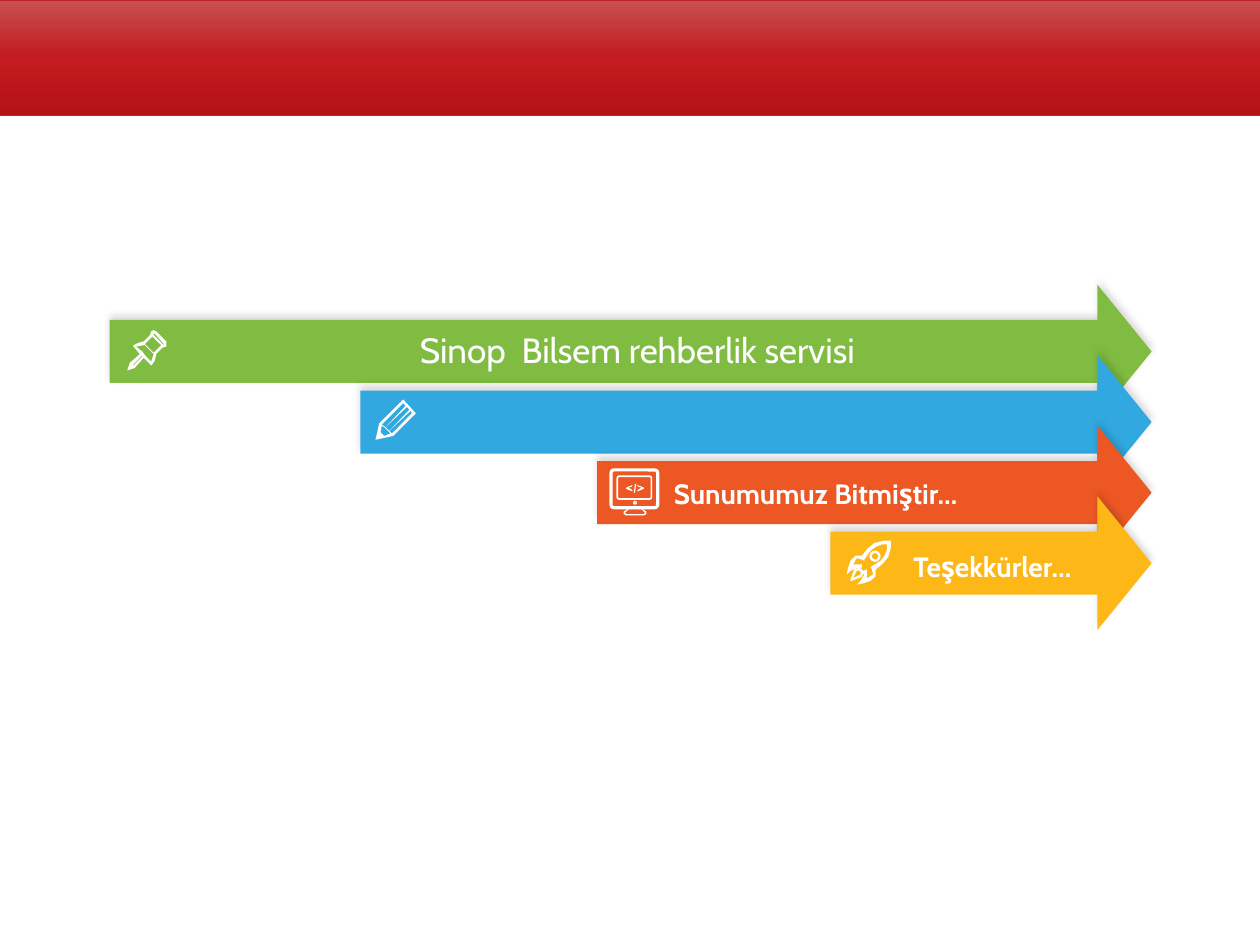
from copy import deepcopy

from pptx import Presentation
from pptx.dml.color import RGBColor
from pptx.enum.shapes import MSO_SHAPE as Preset
from pptx.enum.text import PP_ALIGN as Align
from pptx.oxml import parse_xml
from pptx.oxml.ns import nsdecls
from pptx.util import Inches, Pt

COLORS = {
    "green": "7FBC41", "blue": "31A8DF", "orange": "EC5724", "yellow": "FDB817",
    "white": "FFFFFF", "shadow": "000000", "header_line": "BB2326",
    "header_top": "C65051", "header_middle": "C31B1F", "header_bottom": "B41215",
}
FONT = "Cabin"

ARROWS = [("green", 0.87), ("blue", 2.86), ("orange", 4.74), ("yellow", 6.59)]
FIRST_CENTER, ARROW_STEP = 2.79, 0.56
HEAD_LEFT, TIP = 8.71, 9.14
HEAD_HALF, SHAFT_HALF = 0.53, 0.25

PENCIL = [
    [(3.3, 3.28), (3.2, 3.17), (3.01, 3.36), (2.98, 3.49), (3.12, 3.46)],
    [(3.11, 3.44), (3.09, 3.42), (3.26, 3.26), (3.27, 3.28)],
    [(3.05, 3.46), (3.02, 3.43), (3.03, 3.38), (3.05, 3.39), (3.09, 3.43), (3.1, 3.44)],
    [(3.25, 3.25), (3.09, 3.42), (3.06, 3.39), (3.23, 3.23)],
    [(3.2, 3.2), (3.22, 3.22), (3.06, 3.39), (3.03, 3.37)],
]
PIN = [
    [(1.24, 2.81), (1.29, 2.76), (1.32, 2.75), (1.32, 2.71), (1.24, 2.63), (1.22, 2.62),
     (1.2, 2.63), (1.19, 2.66), (1.14, 2.71), (1.1, 2.72), (1.06, 2.74), (1.06, 2.75),
     (1.11, 2.81), (1.03, 2.88), (1.01, 2.94), (1.07, 2.92), (1.14, 2.84), (1.2, 2.9),
     (1.21, 2.89), (1.23, 2.86)],
    [(1.23, 2.65), (1.3, 2.73), (1.3, 2.74), (1.29, 2.73), (1.22, 2.66), (1.22, 2.65)],
    [(1.22, 2.8), (1.15, 2.73), (1.21, 2.67), (1.28, 2.74)],
    [(1.06, 2.9), (1.05, 2.9), (1.13, 2.82), (1.13, 2.83)],
    [(1.16, 2.83), (1.13, 2.79), (1.08, 2.75), (1.14, 2.74), (1.15, 2.74), (1.22, 2.81),
     (1.2, 2.87)],
]
ROCKET = [
    [(6.72, 4.56), (6.73, 4.51), (6.75, 4.45), (6.79, 4.41), (6.84, 4.41), (6.89, 4.35),
     (6.94, 4.31), (7.02, 4.29), (7.07, 4.29), (7.07, 4.35), (7.05, 4.42), (7.01, 4.47),
     (6.95, 4.52), (6.95, 4.57), (6.91, 4.61), (6.85, 4.63), (6.8, 4.64), (6.83, 4.61),
     (6.86, 4.56), (6.84, 4.55), (6.81, 4.52), (6.8, 4.51), (6.75, 4.53)],
    [(6.95, 4.34), (6.91, 4.37), (6.86, 4.44), (6.86, 4.45), (6.84, 4.44), (6.8, 4.43),
     (6.77, 4.48), (6.84, 4.48), (6.84, 4.5), (6.83, 4.51), (6.85, 4.53), (6.88, 4.52),
     (6.88, 4.59), (6.93, 4.56), (6.92, 4.52), (6.91, 4.5), (6.99, 4.45), (7.02, 4.41),
     (7.04, 4.36), (7.04, 4.32), (7, 4.32)],
]
ROCKET_FLAME = [
    [(6.75, 4.61), (6.75, 4.6), (6.78, 4.52), (6.81, 4.51), (6.84, 4.52), (6.85, 4.55),
     (6.84, 4.58), (6.76, 4.61)],
    [(6.83, 4.53), (6.8, 4.53), (6.77, 4.59), (6.83, 4.56)],
]
MONITOR_STAND = [
    [(4.98, 4.04), (4.95, 4.06), (4.95, 4.08), (4.97, 4.09), (5.11, 4.09), (5.13, 4.08),
     (5.13, 4.06), (5.1, 4.04)],
    [(4.99, 4.04), (4.96, 4.07), (4.97, 4.08), (5.11, 4.08), (5.12, 4.07), (5.09, 4.04)],
]
CODE_MARKS = [
    [(4.97, 3.88), (5.02, 3.9), (5.02, 3.89), (4.99, 3.87), (5.02, 3.86), (5.02, 3.85),
     (4.97, 3.87)],
    [(5.04, 3.84), (5.03, 3.91), (5.04, 3.91), (5.05, 3.84)],
    [(5.06, 3.86), (5.09, 3.87), (5.06, 3.89), (5.06, 3.9), (5.11, 3.88), (5.11, 3.87),
     (5.06, 3.85)],
]


class SlideBuilder:
    def __init__(self, slide, font, colors):
        self.slide = slide
        self.font = font
        self.colors = colors

    def color(self, name):
        return RGBColor.from_string(self.colors[name])

    def polygon(self, contours, color):
        outlines = [[(Inches(x), Inches(y)) for x, y in contour] for contour in contours]
        builder = self.slide.shapes.build_freeform(*outlines[0][0])
        builder.add_line_segments(outlines[0][1:])
        for outline in outlines[1:]:
            builder.move_to(*outline[0])
            builder.add_line_segments(outline[1:])
        shape = builder.convert_to_shape()
        shape.shadow.inherit = False
        shape.fill.solid()
        shape.fill.fore_color.rgb = self.color(color)
        shape.line.fill.background()
        return shape

    def arrow(self, left, center, color):
        shape = self.polygon([[
            (HEAD_LEFT, center - HEAD_HALF), (TIP, center), (HEAD_LEFT, center + HEAD_HALF),
            (HEAD_LEFT, center + SHAFT_HALF), (left, center + SHAFT_HALF),
            (left, center - SHAFT_HALF), (HEAD_LEFT, center - SHAFT_HALF),
        ]], color)
        effects = shape._element.xpath("./p:spPr/a:effectLst")[0]
        effects.append(parse_xml(
            f'<a:outerShdw {nsdecls("a")} blurRad="{Pt(4)}" dist="{Pt(3)}" dir="16200000" '
            f'algn="b" rotWithShape="0"><a:srgbClr val="{self.colors["shadow"]}">'
            '<a:alpha val="15000"/></a:srgbClr></a:outerShdw>'))

    def preset(self, kind, left, top, width, height, line, weight):
        shape = self.slide.shapes.add_shape(
            kind, Inches(left), Inches(top), Inches(width), Inches(height))
        shape.shadow.inherit = False
        shape.fill.background()
        shape.line.color.rgb = self.color(line)
        shape.line.width = Pt(weight)
        return shape

    def header(self, stops):
        shape = self.preset(Preset.RECTANGLE, -0.01, 0, 10.01, 0.92, "header_line", 0.5)
        shape.fill.gradient()
        shape.fill.gradient_angle = 270
        stop_list = shape._element.xpath(".//a:gsLst")[0]
        stop_list.insert(1, deepcopy(stop_list[0]))
        for stop, (position, color) in zip(shape.fill.gradient_stops, stops):
            stop.position = position
            stop.color.rgb = self.color(color)

    def text(self, content, left, top, width, height, size, bold=False, align=Align.LEFT):
        box = self.slide.shapes.add_textbox(
            Inches(left), Inches(top), Inches(width), Inches(height))
        box.text_frame.word_wrap = True
        paragraph = box.text_frame.paragraphs[0]
        paragraph.text = content
        paragraph.alignment = align
        paragraph.font.name = self.font
        paragraph.font.size = Pt(size)
        paragraph.font.bold = bold
        paragraph.font.color.rgb = self.color("white")


def main():
    presentation = Presentation()
    presentation.slide_width, presentation.slide_height = Inches(10), Inches(7.5)
    slide = presentation.slides.add_slide(presentation.slide_layouts[6])
    builder = SlideBuilder(slide, FONT, COLORS)

    for index, (color, left) in enumerate(ARROWS):
        builder.arrow(left, FIRST_CENTER + index * ARROW_STEP, color)

    builder.preset(Preset.ROUNDED_RECTANGLE, 4.85, 3.73, 0.37, 0.3, "white", 1.8).adjustments[0] = 0.08
    builder.preset(Preset.ROUNDED_RECTANGLE, 4.9, 3.78, 0.27, 0.18, "white", 1).adjustments[0] = 0.08
    builder.preset(Preset.OVAL, 5.03, 3.98, 0.02, 0.02, "white", 0.8)
    for icon in (MONITOR_STAND, CODE_MARKS, PENCIL, PIN, ROCKET, ROCKET_FLAME):
        builder.polygon(icon, "white")
    builder.preset(Preset.OVAL, 6.91, 4.38, 0.07, 0.07, "white", 1.3)

    builder.text("Sinop  Bilsem rehberlik servisi", 1.4, 2.56, 7.32, 0.44, 20, align=Align.CENTER)
    builder.text("Sunumumuz Bitmiştir…", 5.25, 3.73, 3.56, 0.37, 16, bold=True)
    builder.text("Teşekkürler…", 7.15, 4.31, 1.71, 0.37, 16, bold=True)
    builder.header([(0, "header_top"), (0.5, "header_middle"), (1, "header_bottom")])

    presentation.save("out.pptx")


if __name__ == "__main__":
    main()
